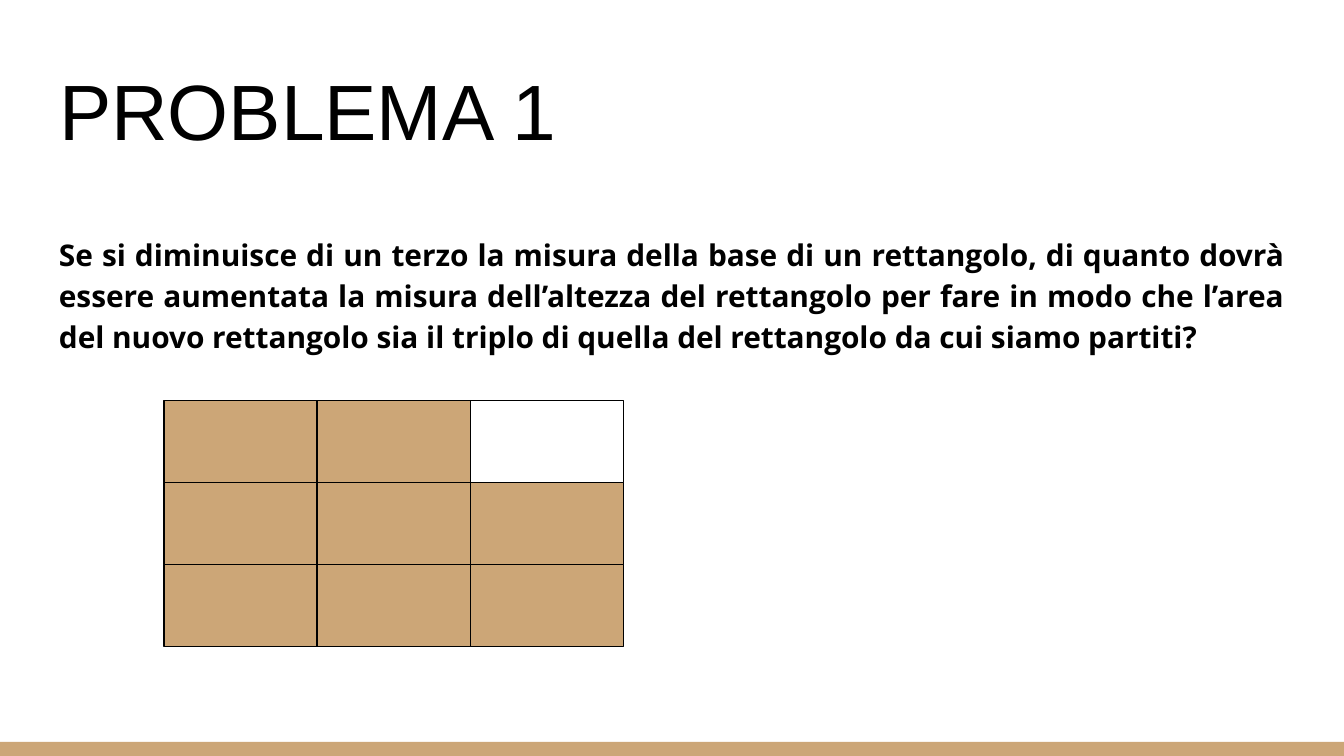
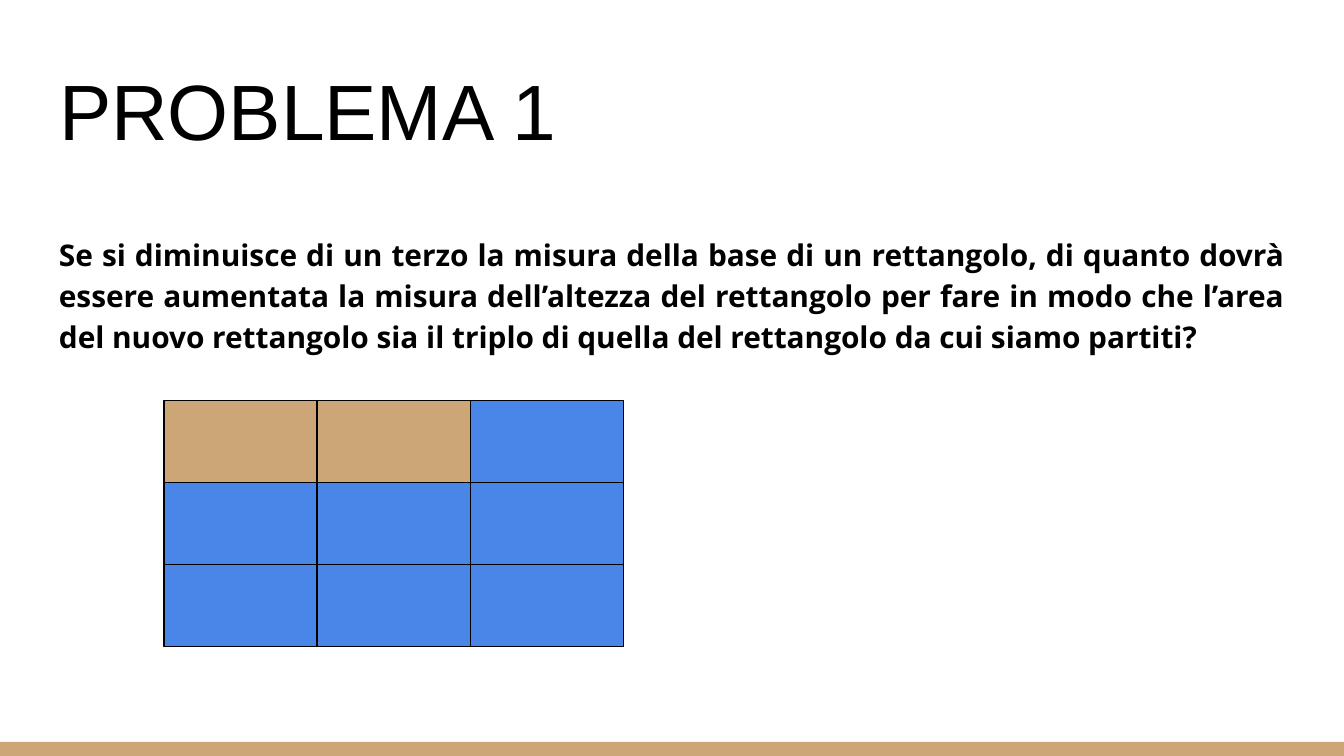
"""Build two slides that solve a rectangle problem with a three-by-three grid."""
import pptx
import pptx.dml.color
import pptx.enum.shapes
import pptx.enum.text
import pptx.util

Inches = pptx.util.Inches
Pt = pptx.util.Pt
RECTANGLE = pptx.enum.shapes.MSO_SHAPE.RECTANGLE

TAN = pptx.dml.color.RGBColor(0xCC, 0xA6, 0x77)
BLUE = pptx.dml.color.RGBColor(0x4A, 0x86, 0xE8)
WHITE = pptx.dml.color.RGBColor(0xFF, 0xFF, 0xFF)
BLACK = pptx.dml.color.RGBColor(0x00, 0x00, 0x00)

TITLE = "PROBLEMA 1"
QUESTION = (
    "Se si diminuisce di un terzo la misura della base di un rettangolo, "
    "di quanto dovrà essere aumentata la misura dell’altezza del rettangolo "
    "per fare in modo che l’area del nuovo rettangolo sia il triplo di quella "
    "del rettangolo da cui siamo partiti?"
)
GRID_LEFT, GRID_TOP = 1.22, 2.98
CELL_WIDTH, CELL_HEIGHT = 1.14, 0.61
GRIDS = [
    [[TAN, TAN, WHITE], [TAN] * 3, [TAN] * 3],
    [[TAN, TAN, BLUE], [BLUE] * 3, [BLUE] * 3],
]


def add_rectangle(slide, left, top, width, height, fill):
    shape = slide.shapes.add_shape(
        RECTANGLE, Inches(left), Inches(top), Inches(width), Inches(height)
    )
    shape.shadow.inherit = False
    shape.fill.solid()
    shape.fill.fore_color.rgb = fill
    shape.line.fill.background()
    return shape


def format_text(shape, text, font_name, size, bold, alignment, anchor):
    text_frame = shape.text_frame
    text_frame.text = text
    text_frame.word_wrap = True
    text_frame.auto_size = pptx.enum.text.MSO_AUTO_SIZE.NONE
    text_frame.vertical_anchor = anchor
    text_frame.margin_left = text_frame.margin_right = Inches(0.1)
    text_frame.margin_top = text_frame.margin_bottom = Inches(0.1)
    paragraph = text_frame.paragraphs[0]
    paragraph.alignment = alignment
    font = paragraph.runs[0].font
    font.name = font_name
    font.size = Pt(size)
    font.bold = bold
    font.color.rgb = BLACK


presentation = pptx.Presentation()
presentation.slide_width = Inches(10)
presentation.slide_height = presentation.slide_width * 9 // 16

for grid in GRIDS:
    slide = presentation.slides.add_slide(presentation.slide_layouts[5])
    add_rectangle(slide, 0, 5.52, 10, 0.11, TAN)

    title = slide.shapes.title
    title.left, title.top = Inches(0.34), Inches(0.35)
    title.width, title.height = Inches(9.32), Inches(0.91)
    format_text(
        title, TITLE, "Arial", 42, False,
        pptx.enum.text.PP_ALIGN.LEFT, pptx.enum.text.MSO_ANCHOR.BOTTOM,
    )

    question = slide.shapes.add_textbox(
        Inches(0.34), Inches(1.34), Inches(9.32), Inches(3.67)
    )
    format_text(
        question, QUESTION, "Open Sans", 16, True,
        pptx.enum.text.PP_ALIGN.JUSTIFY, pptx.enum.text.MSO_ANCHOR.TOP,
    )
    question.text_frame.margin_top = Inches(0.38)
    question.text_frame.paragraphs[0].line_spacing = 1.15

    for row, fills in enumerate(grid):
        for column, fill in enumerate(fills):
            cell = add_rectangle(
                slide,
                GRID_LEFT + column * CELL_WIDTH,
                GRID_TOP + row * CELL_HEIGHT,
                CELL_WIDTH,
                CELL_HEIGHT,
                fill,
            )
            cell.line.color.rgb = BLACK
            cell.line.width = Pt(0.75)

presentation.save("out.pptx")
